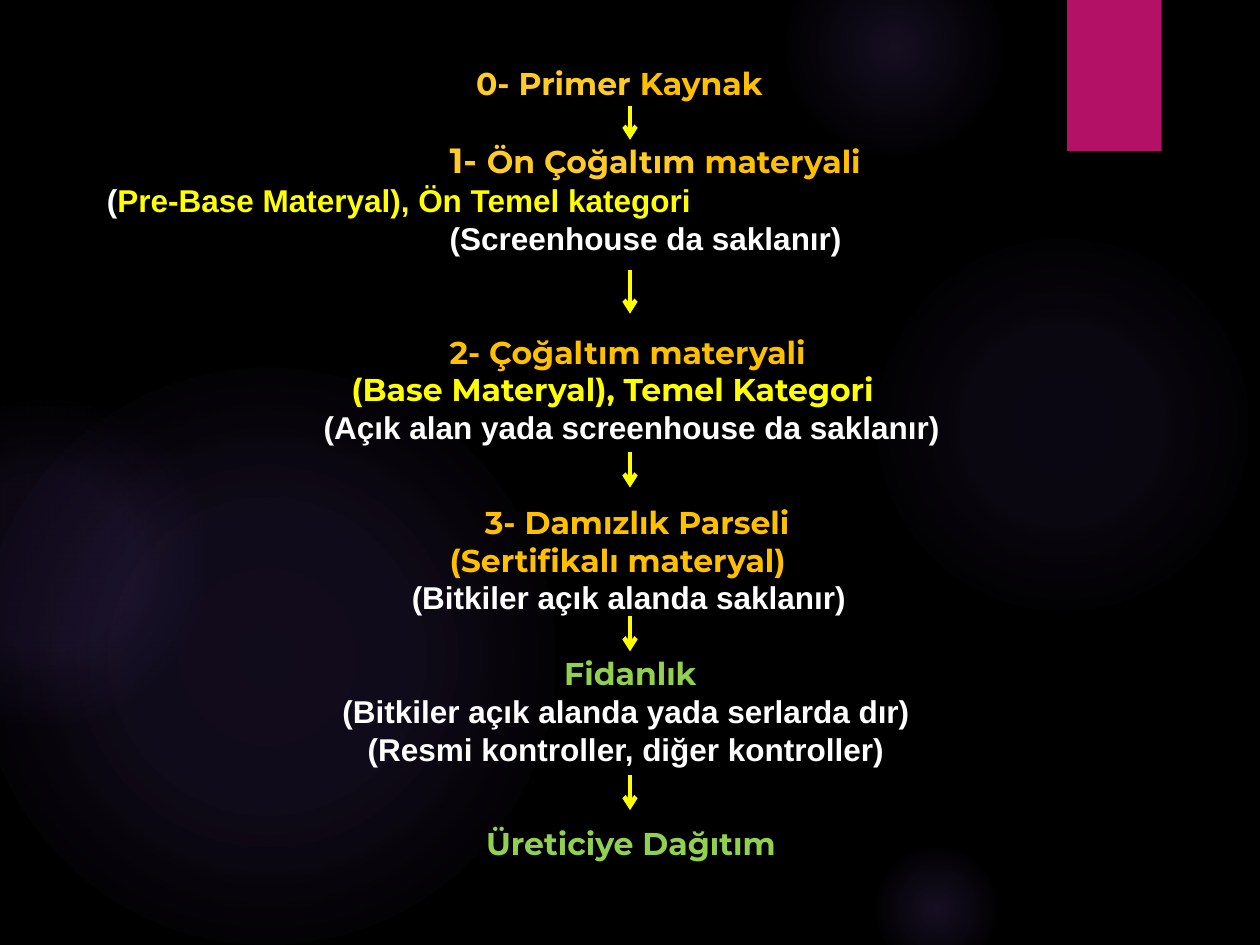
from lxml import etree
from pptx import Presentation
from pptx.dml.color import RGBColor
from pptx.enum import shapes, text
from pptx.oxml import ns
from pptx.util import Inches, Pt

GOLD, AMBER, YELLOW = "FFCB25", "FFC000", "FFFF00"
WHITE, GREEN, PINK, VIOLET, BLACK = "FFFFFF", "92D050", "B31166", "9B6BF2", "000000"
HEADING, BODY = "Montserrat", "Arial"
PITCH = 21.6

# left, top, diameter, (position %, opacity %) stops
GLOWS = [
    (6.89, 1.83, 3.08, [(0, 7), (36, 6), (69, 0)]),
    (6.22, -0.5, 1.75, [(0, 14), (36, 7), (73, 0)]),
    (6.89, 6.67, 1.08, [(0, 14), (36, 7), (66, 0)]),
    (-0.17, 2.92, 4.58, [(0, 11), (36, 10), (75, 0)]),
    (-0.92, 3.17, 2.58, [(0, 8), (36, 8), (72, 0)]),
]

# left edge, space before in points, font, (words, colour, size) spans
LINES = [
    (3.78, 0, HEADING, [("0- Primer ", GOLD, 18), ("Kaynak", AMBER, 18)]),
    (3.57, 23.5, HEADING, [("1- ", GOLD, 20), ("Ön Çoğaltım ", GOLD, 18),
                           ("materyali", AMBER, 18)]),
    (0.85, 0, BODY, [("(", WHITE, 18),
                     ("Pre-Base Materyal), Ön Temel kategori", YELLOW, 18)]),
    (3.57, 0, BODY, [("(Screenhouse da saklanır)", WHITE, 18)]),
    (3.57, 43.5, HEADING, [("2- Çoğaltım materyali", AMBER, 18)]),
    (2.79, 0, HEADING, [("(Base Materyal), Temel Kategori", YELLOW, 18)]),
    (2.57, 0, BODY, [("(Açık alan yada screenhouse da saklanır)", WHITE, 18)]),
    (3.85, 32.5, HEADING, [("3- Damızlık Parseli", AMBER, 18)]),
    (3.57, 0, HEADING, [("(Sertifikalı materyal)", AMBER, 18)]),
    (3.27, 0, BODY, [("(Bitkiler açık alanda saklanır)", WHITE, 18)]),
    (4.48, 21.8, HEADING, [("Fidanlık", GREEN, 18)]),
    (2.72, 0, BODY, [("(Bitkiler açık alanda yada serlarda dır)", WHITE, 18)]),
    (2.92, 0, BODY, [("(Resmi kontroller, diğer kontroller)", WHITE, 18)]),
    (3.86, 32.2, HEADING, [("Üreticiye Dağıtım", GREEN, 18)]),
]

ARROW_X = 5
ARROWS = [(0.84, 1.11), (2.14, 2.49), (3.59, 3.87), (4.89, 5.17), (6.15, 6.43)]


def colour(value):
    return RGBColor.from_string(value)


def child(parent, tag, **attributes):
    return etree.SubElement(parent, ns.qn(tag), attributes)


def add_block(page, kind, left, top, width, height, fill):
    block = page.shapes.add_shape(
        kind, Inches(left), Inches(top), Inches(width), Inches(height))
    block.fill.solid()
    block.fill.fore_color.rgb = colour(fill)
    block.line.fill.background()
    block.shadow.inherit = False
    return block


def add_glow(page, left, top, size, stops):
    glow = add_block(page, shapes.MSO_SHAPE.OVAL, left, top, size, size, VIOLET)
    properties = glow.element.spPr
    gradient = etree.Element(ns.qn("a:gradFill"), rotWithShape="1")
    stop_list = child(gradient, "a:gsLst")
    for position, opacity in stops:
        stop = child(stop_list, "a:gs", pos=str(position * 1000))
        tint = child(stop, "a:srgbClr", val=VIOLET)
        child(tint, "a:alpha", val=str(opacity * 1000))
    shade = child(gradient, "a:path", path="circle")
    child(shade, "a:fillToRect", l="50000", t="50000", r="50000", b="50000")
    properties.replace(properties.find(ns.qn("a:solidFill")), gradient)


def add_arrow(page, top, bottom):
    arrow = page.shapes.add_connector(
        shapes.MSO_CONNECTOR.STRAIGHT,
        Inches(ARROW_X), Inches(top), Inches(ARROW_X), Inches(bottom))
    arrow.line.color.rgb = colour(YELLOW)
    arrow.line.width = Pt(2.5)
    child(arrow.line._get_or_add_ln(), "a:tailEnd", type="arrow")
    child(arrow.element.spPr, "a:effectLst")


def add_steps(page):
    left, inset = 0.47, 0.1
    box = page.shapes.add_textbox(
        Inches(left), Inches(0.46), Inches(9.33), Inches(6.5))
    frame = box.text_frame
    frame.word_wrap = True
    frame.vertical_anchor = text.MSO_ANCHOR.TOP
    for index, (start, before, font, spans) in enumerate(LINES):
        para = frame.add_paragraph() if index else frame.paragraphs[0]
        para.line_spacing = Pt(PITCH)
        para.space_before = Pt(before)
        indent = Inches(start - left - inset)
        para._p.get_or_add_pPr().set("marL", str(indent))
        for words, ink, size in spans:
            span = para.add_run()
            span.text = words
            span.font.name = font
            span.font.size = Pt(size)
            span.font.bold = True
            span.font.color.rgb = colour(ink)


def main():
    deck = Presentation()
    deck.slide_width, deck.slide_height = Inches(10), Inches(7.5)
    page = deck.slides.add_slide(deck.slide_layouts[6])
    page.background.fill.solid()
    page.background.fill.fore_color.rgb = colour(BLACK)
    for glow in GLOWS:
        add_glow(page, *glow)
    add_block(page, shapes.MSO_SHAPE.RECTANGLE, 8.47, 0, 0.75, 1.2, PINK)
    add_steps(page)
    for top, bottom in ARROWS:
        add_arrow(page, top, bottom)
    deck.save("out.pptx")


if __name__ == "__main__":
    main()
